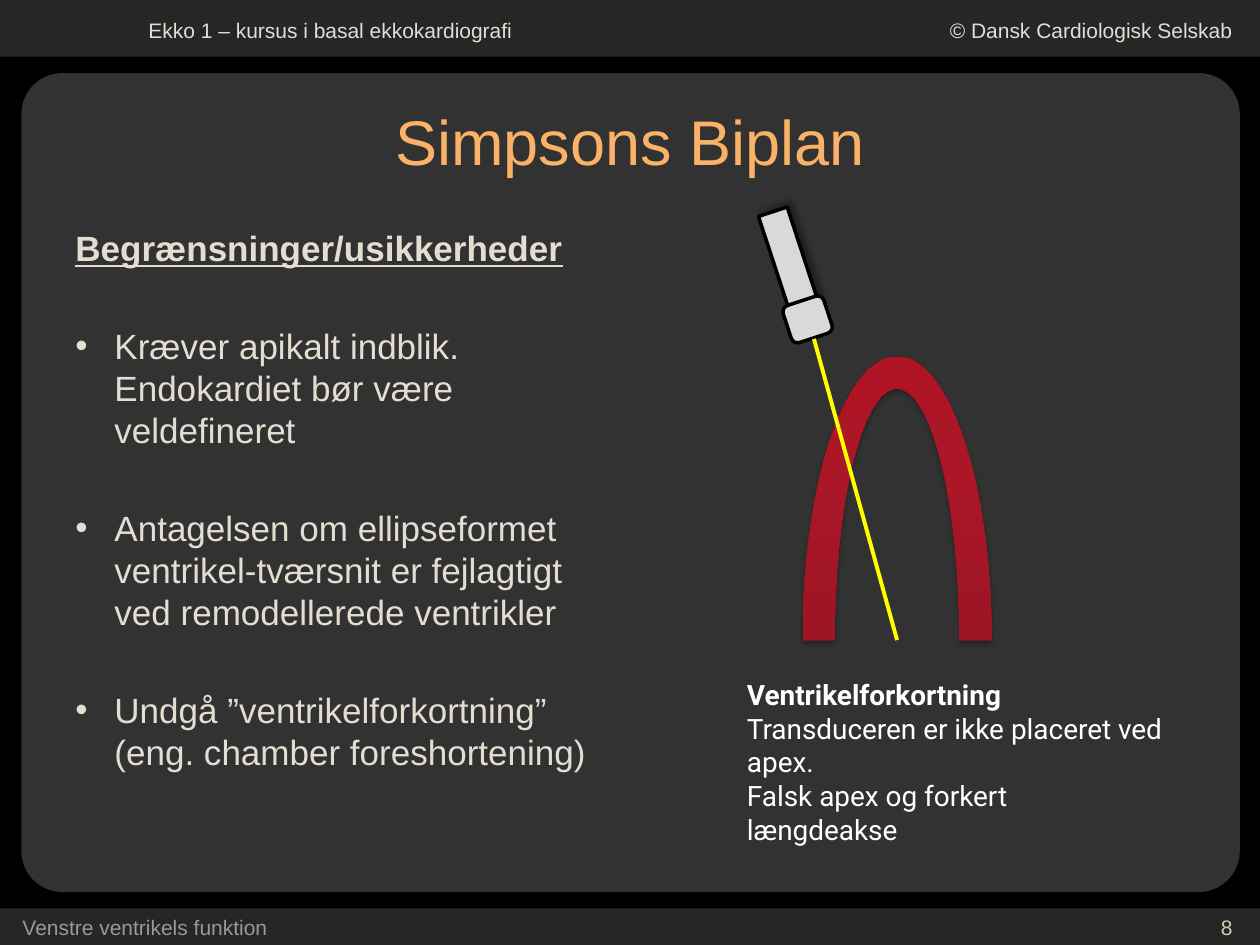
from copy import deepcopy
from dataclasses import dataclass

from lxml import etree
from pptx import Presentation
from pptx import util as u
from pptx.dml.color import RGBColor
from pptx.enum import shapes, text
from pptx.oxml.ns import qn


@dataclass(frozen=True)
class Theme:
    background: str = "000000"
    band: str = "262626"
    panel: str = "323232"
    title: str = "F9B268"
    body: str = "E3DED1"
    footer: str = "999999"
    number: str = "D3CBB6"
    caption: str = "FFFFFF"
    probe: str = "D9D9D9"
    outline: str = "000000"
    beam: str = "FFFF00"
    muscle: tuple = ((0, "84111E"), (0.8, "AB1727"), (1, "AF1425"))
    font: str = "Arial"
    caption_font: str = "Roboto"
    title_size: int = 36
    body_size: int = 20
    caption_size: int = 16
    small_size: int = 12


theme = Theme()
color = RGBColor.from_string
Inches = u.Inches
PP_ALIGN = text.PP_ALIGN


def write(shape, lines, size, hue, font=theme.font, align=PP_ALIGN.LEFT):
    """Fill a text shape with one paragraph per line and format its runs."""
    frame = shape.text_frame
    frame.word_wrap = True
    frame.text = "\n".join(lines)
    for paragraph in frame.paragraphs:
        paragraph.alignment = align
        for run in paragraph.runs:
            run.font.name = font
            run.font.size = u.Pt(size)
            run.font.color.rgb = color(hue)
    return frame.paragraphs


def add_shadow(shape, alpha, blur, distance, angle):
    """Give a shape a black outer shadow; blur and distance are in points."""
    shape.shadow.inherit = False
    effects = shape._element.spPr.find(qn("a:effectLst"))
    shadow = etree.SubElement(effects, qn("a:outerShdw"), blurRad=str(u.Pt(blur)),
                              dist=str(u.Pt(distance)), dir=str(angle * 60000),
                              rotWithShape="0")
    black = etree.SubElement(shadow, qn("a:srgbClr"), val=theme.outline)
    etree.SubElement(black, qn("a:alpha"), val=str(alpha * 1000))


presentation = Presentation()
presentation.slide_width, presentation.slide_height = Inches(10), Inches(7.5)
slide = presentation.slides.add_slide(presentation.slide_layouts[5])
slide.background.fill.solid()
slide.background.fill.fore_color.rgb = color(theme.background)

# Bands and panel
RECTANGLE = shapes.MSO_SHAPE.RECTANGLE
ROUNDED = shapes.MSO_SHAPE.ROUNDED_RECTANGLE
for kind, box, hue in (
    (RECTANGLE, (0, 7.21, 10, 0.29), theme.band),
    (RECTANGLE, (0, 0, 10, 0.45), theme.band),
    (ROUNDED, (0.17, 0.58, 9.67, 6.5), theme.panel),
):
    panel = slide.shapes.add_shape(kind, *map(Inches, box))
    panel.shadow.inherit = False
    panel.fill.solid()
    panel.fill.fore_color.rgb = color(hue)
    panel.line.fill.background()
panel.adjustments[0] = 0.05

# Header and footer
for line, box, hue, align in (
    ("Ekko 1 – kursus i basal ekkokardiografi", (1.08, 0.09, 3.75, 0.3),
     theme.body, PP_ALIGN.LEFT),
    ("© Dansk Cardiologisk Selskab", (6.89, 0.09, 2.99, 0.3),
     theme.body, PP_ALIGN.RIGHT),
    ("Venstre ventrikels funktion", (0.08, 7.21, 3.17, 0.25),
     theme.footer, PP_ALIGN.LEFT),
    ("8", (7.55, 7.21, 2.33, 0.25), theme.number, PP_ALIGN.RIGHT),
):
    label = slide.shapes.add_textbox(*map(Inches, box))
    write(label, [line], theme.small_size, hue, align=align)

# Title
title = slide.shapes.title
title.left, title.top, title.width, title.height = map(Inches, (0.5, 0.67, 9, 0.88))
title.text_frame.vertical_anchor = text.MSO_ANCHOR.MIDDLE
write(title, ["Simpsons Biplan"], theme.title_size, theme.title, align=PP_ALIGN.CENTER)
slide.shapes._spTree.append(title._element)  # in front of the panel

# Limitations
body = slide.shapes.add_textbox(*map(Inches, (0.5, 1.75, 4.42, 5.25)))
heading, *limitations = write(body, [
    "Begrænsninger/usikkerheder",
    "Kræver apikalt indblik. Endokardiet bør være veldefineret",
    "Antagelsen om ellipseformet ventrikel-tværsnit er fejlagtigt ved "
    "remodellerede ventrikler",
    "Undgå ”ventrikelforkortning” (eng. chamber foreshortening)",
], theme.body_size, theme.body)
heading.line_spacing = u.Pt(24)
heading.runs[0].font.bold = True
heading.runs[0].font.underline = True
for paragraph in limitations:
    paragraph.line_spacing = u.Pt(24)
    paragraph.space_before = u.Pt(32)
    properties = paragraph._p.get_or_add_pPr()
    properties.set("marL", str(Inches(0.31)))
    properties.set("indent", str(Inches(-0.31)))
    etree.SubElement(properties, qn("a:buFont"), typeface=theme.font)
    etree.SubElement(properties, qn("a:buChar"), char="•")

# Ventricle wall
ventricle = slide.shapes.add_shape(shapes.MSO_SHAPE.BLOCK_ARC,
                                   *map(Inches, (6.37, 2.83, 1.5, 4.5)))
for index, value in enumerate((108, 0, 0.17)):
    ventricle.adjustments[index] = value
ventricle.line.fill.background()
ventricle.fill.gradient()
ventricle.fill.gradient_angle = 90
stop_list = ventricle._element.spPr.find(".//" + qn("a:gsLst"))
stop_list.append(deepcopy(stop_list[-1]))
for stop, (position, hue) in zip(ventricle.fill.gradient_stops, theme.muscle):
    stop.position = position
    stop.color.rgb = color(hue)
add_shadow(ventricle, 35, 3.1, 1.8, 90)

# Transducer
transducer = slide.shapes.add_group_shape()
for kind, box in ((RECTANGLE, (6.14, 1.66, 0.24, 0.81)),
                  (ROUNDED, (6.24, 2.38, 0.34, 0.31))):
    part = transducer.shapes.add_shape(kind, *map(Inches, box))
    part.rotation = 341.8
    part.fill.solid()
    part.fill.fore_color.rgb = color(theme.probe)
    part.line.color.rgb = color(theme.outline)
    part.line.width = u.Pt(2)
    if kind == RECTANGLE:
        add_shadow(part, 40, 4, 3, 315)
    else:
        part.shadow.inherit = False

beam = slide.shapes.add_connector(shapes.MSO_CONNECTOR.STRAIGHT,
                                  *map(Inches, (6.46, 2.69, 7.12, 5.08)))
beam.line.color.rgb = color(theme.beam)
beam.line.width = u.Pt(2.25)
etree.SubElement(beam._element.spPr, qn("a:effectLst"))

# Caption
caption = slide.shapes.add_textbox(*map(Inches, (5.83, 5.33, 3.5, 1.18)))
caption_lines = write(caption, [
    "Ventrikelforkortning",
    "Transduceren er ikke placeret ved apex.",
    "Falsk apex og forkert længdeakse",
], theme.caption_size, theme.caption, theme.caption_font)
caption_lines[0].runs[0].font.bold = True

presentation.save("out.pptx")
